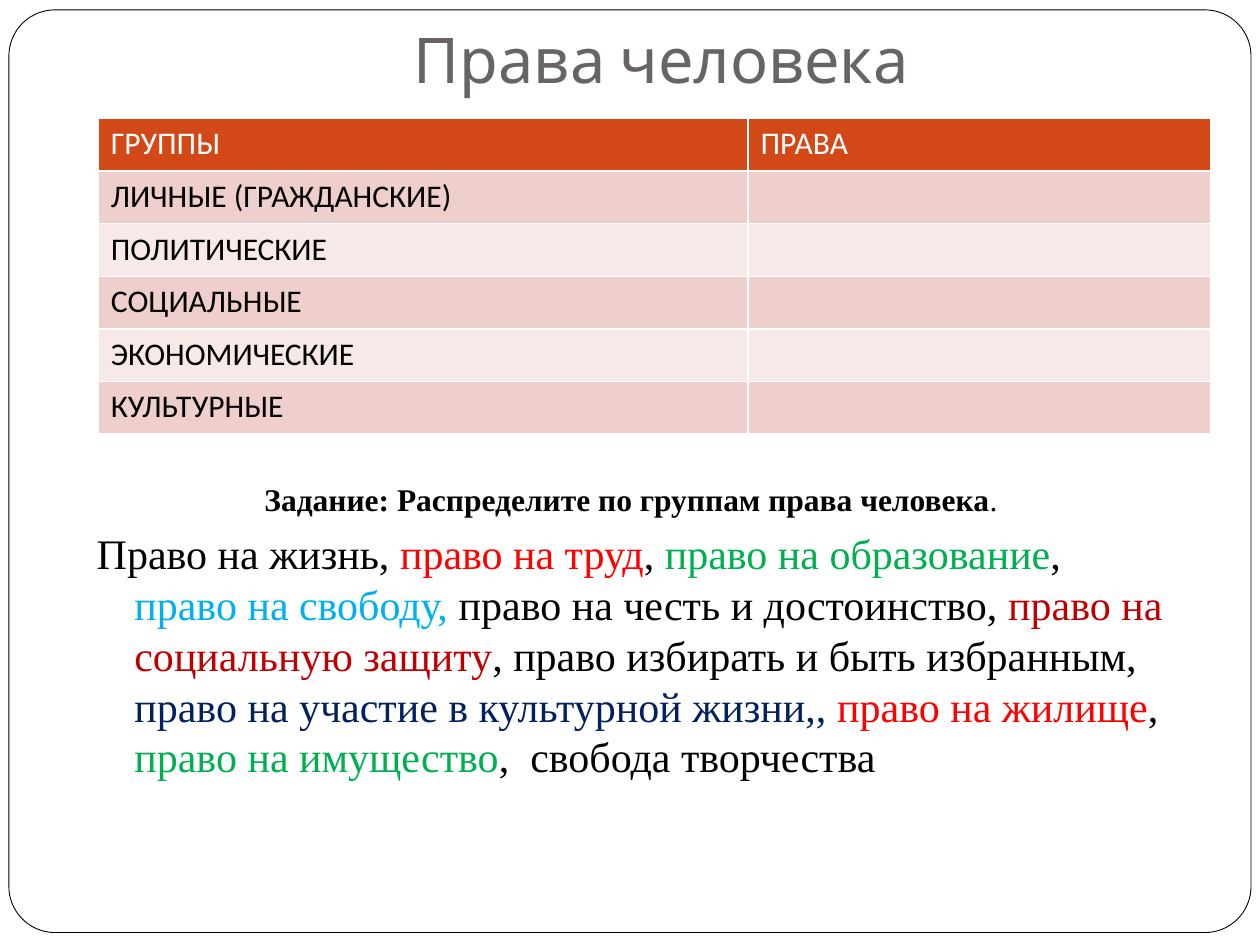
from lxml import etree
from pptx import Presentation
from pptx.dml.color import RGBColor
from pptx.enum.shapes import MSO_SHAPE
from pptx.enum.text import MSO_ANCHOR, PP_ALIGN
from pptx.oxml.ns import qn
from pptx.util import Cm, Pt

ROUNDED = MSO_SHAPE.ROUNDED_RECTANGLE
CENTER, LEFT = PP_ALIGN.CENTER, PP_ALIGN.LEFT
TOP, BOTTOM = MSO_ANCHOR.TOP, MSO_ANCHOR.BOTTOM
SERIF = "Times New Roman"
BLACK, WHITE, RED, GREEN = "000000", "FFFFFF", "FF0000", "00B050"

TITLE = "Права человека"
HEADERS = ["ГРУППЫ", "ПРАВА"]
GROUPS = ["ЛИЧНЫЕ (ГРАЖДАНСКИЕ)", "ПОЛИТИЧЕСКИЕ", "СОЦИАЛЬНЫЕ", "ЭКОНОМИЧЕСКИЕ", "КУЛЬТУРНЫЕ"]
HEADER_FILL = "D34817"
BAND_FILLS = ["EFCFCC", "F7E9E8"]
COLUMN_WIDTHS = [13.1, 9.33]
ROW_HEIGHT = 1.06
TASK = "Задание: Распределите по группам права человека"
RIGHTS = [
    ("Право на жизнь, ", BLACK),
    ("право на труд", RED),
    (", ", BLACK),
    ("право на образование", GREEN),
    (", ", BLACK),
    ("право на свободу, ", "00B0F0"),
    ("право на честь и достоинство, ", BLACK),
    ("право на социальную защиту", "C00000"),
    (", право избирать и быть избранным, ", BLACK),
    ("право на участие в культурной жизни,, ", "002060"),
    ("право на жилище", RED),
    (", ", BLACK),
    ("право на имущество", GREEN),
    (",  свобода творчества", BLACK),
]


def color(value):
    return RGBColor.from_string(value)


def paint(target, value):
    target.fill.solid()
    target.fill.fore_color.rgb = color(value)


def add_span(para, text, size, font, value, bold=False):
    span = para.add_run()
    span.text = text
    span.font.size = Pt(size)
    span.font.name = font
    span.font.bold = bold
    span.font.color.rgb = color(value)


def add_box(page, left, top, width, height, anchor, insets):
    frame = page.shapes.add_textbox(Cm(left), Cm(top), Cm(width), Cm(height)).text_frame
    frame.word_wrap = True
    frame.vertical_anchor = anchor
    frame.margin_left, frame.margin_top, frame.margin_right, frame.margin_bottom = map(Cm, insets)
    return frame


def hang(para, indent):
    properties = para._p.get_or_add_pPr()
    properties.set("marL", str(Cm(indent)))
    properties.set("indent", str(-Cm(indent)))


def add_borders(cell, value, width):
    properties = cell._tc.get_or_add_tcPr()
    for side in ("lnL", "lnR", "lnT", "lnB"):
        line = etree.SubElement(properties, qn("a:" + side), w=str(Pt(width)))
        fill = etree.SubElement(line, qn("a:solidFill"))
        etree.SubElement(fill, qn("a:srgbClr"), val=value)


def add_frame(page):
    frame = page.shapes.add_shape(ROUNDED, Cm(0.18), Cm(0.2), Cm(25.04), Cm(18.6))
    frame.adjustments[0] = 0.05
    frame.shadow.inherit = False
    paint(frame, WHITE)
    frame.line.color.rgb = color(BLACK)
    frame.line.width = Pt(0.5)


def add_groups_table(page):
    rows = [HEADERS] + [[group, ""] for group in GROUPS]
    table = page.shapes.add_table(
        len(rows), len(HEADERS), Cm(1.98), Cm(2.39),
        Cm(sum(COLUMN_WIDTHS)), Cm(ROW_HEIGHT * len(rows)),
    ).table
    for column, width in zip(table.columns, COLUMN_WIDTHS):
        column.width = Cm(width)
    for index, texts in enumerate(rows):
        table.rows[index].height = Cm(ROW_HEIGHT)
        fill = BAND_FILLS[(index - 1) % 2] if index else HEADER_FILL
        for number, text in enumerate(texts):
            cell = table.cell(index, number)
            add_borders(cell, WHITE, 1)
            paint(cell, fill)
            if text:
                add_span(cell.text_frame.paragraphs[0], text, 18, "Calibri",
                         BLACK if index else WHITE)


def add_title(page):
    para = add_box(page, 2.54, 0.76, 21.59, 1.42, BOTTOM, (0.25, 0.13, 0.25, 0.25)).paragraphs[0]
    para.alignment = CENTER
    add_span(para, TITLE, 36, "Cabin", "696464")


def add_task(page):
    frame = add_box(page, 1.95, 9.67, 21.54, 9, TOP, (0, 0, 0, 0))
    heading = frame.paragraphs[0]
    heading.alignment = CENTER
    add_span(heading, TASK, 18, SERIF, BLACK, bold=True)
    add_span(heading, ".", 18, SERIF, BLACK)
    body = frame.add_paragraph()
    body.alignment = LEFT
    body.space_before = Pt(5.8)
    body.line_spacing = Pt(29)
    for text, value in RIGHTS:
        add_span(body, text, 24, SERIF, value)
    for para in frame.paragraphs:
        hang(para, 0.76)


def main():
    deck = Presentation()
    deck.slide_width, deck.slide_height = Cm(25.4), Cm(19.05)
    page = deck.slides.add_slide(deck.slide_layouts[6])
    add_frame(page)
    add_title(page)
    add_task(page)
    add_groups_table(page)
    deck.save("out.pptx")


if __name__ == "__main__":
    main()
